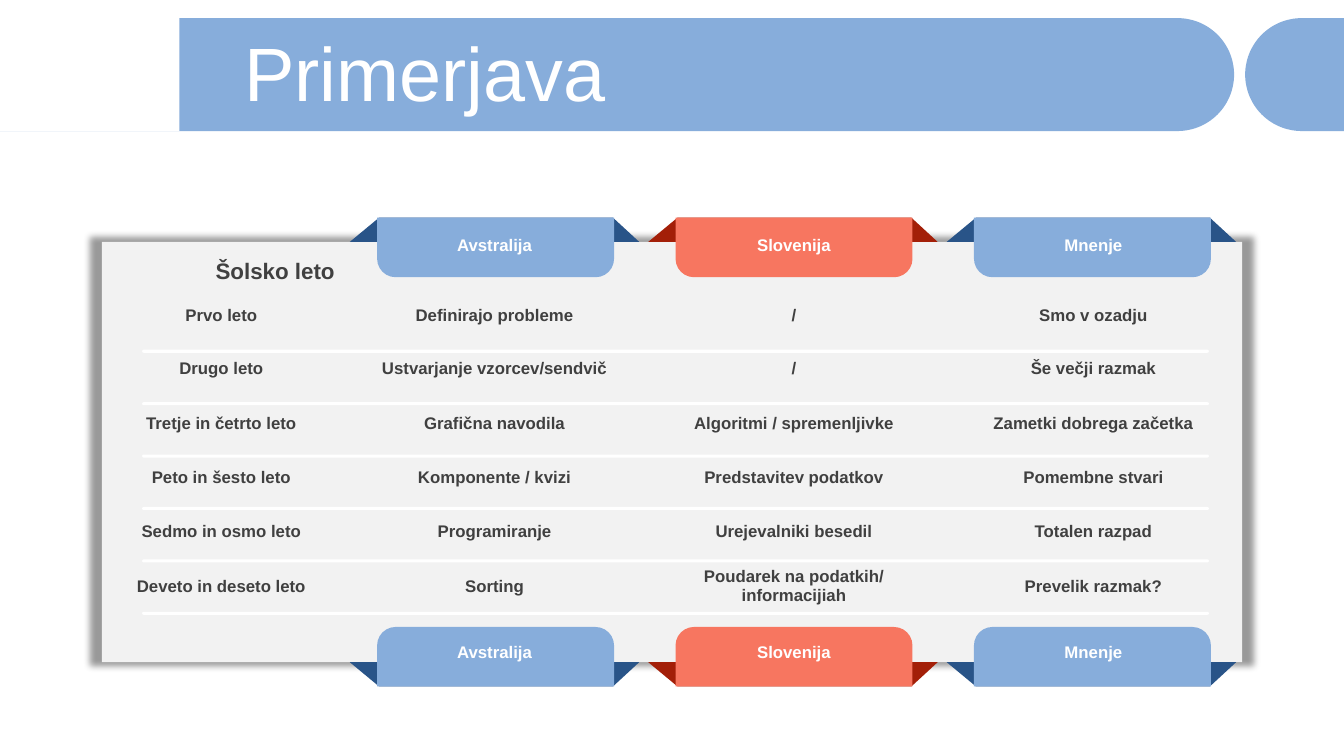
import math

from lxml import etree
from pptx import Presentation
from pptx.dml.color import RGBColor
from pptx.enum.shapes import MSO_SHAPE
from pptx.enum.text import MSO_ANCHOR, MSO_AUTO_SIZE, PP_ALIGN
from pptx.oxml.ns import qn
from pptx.util import Inches, Pt

TITLE = "Primerjava"
COUNTRIES = ["Avstralija", "Slovenija", "Mnenje"]
ROWS = [
    ["Šolsko leto"] + COUNTRIES,
    ["Prvo leto", "Definirajo probleme", "/", "Smo v ozadju"],
    ["Drugo leto", "Ustvarjanje vzorcev/sendvič", "/", "Še večji razmak"],
    ["Tretje in četrto leto", "Grafična navodila", "Algoritmi / spremenljivke",
     "Zametki dobrega začetka"],
    ["Peto in šesto leto", "Komponente / kvizi", "Predstavitev podatkov",
     "Pomembne stvari"],
    ["Sedmo in osmo leto", "Programiranje", "Urejevalniki besedil",
     "Totalen razpad"],
    ["Deveto in deseto leto", "Sorting", "Poudarek na podatkih/\ninformacijiah",
     "Prevelik razmak?"],
    [""] + COUNTRIES,
]
COLUMN_WIDTHS = [2.45, 2.97, 2.97, 2.97]
ROW_HEIGHTS = [0.86, 0.52, 0.54, 0.54, 0.54, 0.54, 0.54, 0.78]

FONT = "Arial"
WHITE = RGBColor(0xFF, 0xFF, 0xFF)
BLUE = RGBColor(0x87, 0xAD, 0xDB)
DARK_BLUE = RGBColor(0x29, 0x54, 0x88)
CORAL = RGBColor(0xF7, 0x76, 0x60)
DARK_RED = RGBColor(0xA3, 0x1F, 0x08)
PANEL_GRAY = RGBColor(0xF2, 0xF2, 0xF2)
TEXT_GRAY = RGBColor(0x40, 0x40, 0x40)
TAB_COLORS = [(BLUE, DARK_BLUE), (CORAL, DARK_RED), (BLUE, DARK_BLUE)]
NO_GRID_STYLE = "{2D5ABB26-0587-4C30-8999-92F81FD0307C}"

SLIDE_WIDTH = 13.33
BANNER_TOP, BANNER_BOTTOM, BANNER_RADIUS = 0.18, 1.3, 0.56
PANEL_TOP, PANEL_BOTTOM = 2.4, 6.57
TAB_TOP, TAB_BOTTOM = 2.16, 6.81
TAB_PITCH, TAB_WIDTH, TAB_HEIGHT = 2.96, 2.35, 0.59


def paint(shape, color):
    shape.fill.solid()
    shape.fill.fore_color.rgb = color
    shape.line.fill.background()
    shape.shadow.inherit = False


def add_outline(slide, points, color):
    """Draw a closed polygon from points given in inches."""
    points = [(Inches(x), Inches(y)) for x, y in points]
    builder = slide.shapes.build_freeform(*points[0])
    builder.add_line_segments(points[1:], close=True)
    paint(builder.convert_to_shape(), color)


def add_preset(slide, kind, left, top, width, height, color):
    shape = slide.shapes.add_shape(
        kind, Inches(left), Inches(top), Inches(width), Inches(height))
    paint(shape, color)
    return shape


def half_circle(center_x, direction):
    """Points from the banner's top to its bottom, bulging left or right."""
    center_y = (BANNER_TOP + BANNER_BOTTOM) / 2
    angles = [math.radians(degrees) for degrees in range(-90, 91, 3)]
    return [(center_x + direction * BANNER_RADIUS * math.cos(angle),
             center_y + BANNER_RADIUS * math.sin(angle)) for angle in angles]


def add_text(paragraph, text, size, color, bold):
    for index, line in enumerate(text.split("\n")):
        if index:
            paragraph.add_line_break()
        run = paragraph.add_run()
        run.text = line
        run.font.name = FONT
        run.font.size = Pt(size)
        run.font.bold = bold
        run.font.color.rgb = color


def add_banner(slide):
    for edge_x, center_x, direction in [(0, 11.68, 1), (SLIDE_WIDTH, 12.91, -1)]:
        outline = [(edge_x, BANNER_TOP), *half_circle(center_x, direction),
                   (edge_x, BANNER_BOTTOM)]
        add_outline(slide, outline, BLUE)
    add_preset(slide, MSO_SHAPE.RECTANGLE, 0, BANNER_TOP, 1.78,
               BANNER_BOTTOM - BANNER_TOP, WHITE)


def add_title(slide):
    title = slide.shapes.title
    title.left, title.top = Inches(2.32), Inches(0.37)
    title.width, title.height = Inches(10.69), Inches(0.79)
    title.element.getparent().append(title.element)  # in front of the banner
    frame = title.text_frame
    frame.auto_size = MSO_AUTO_SIZE.NONE
    frame.vertical_anchor = MSO_ANCHOR.MIDDLE
    paragraph = frame.paragraphs[0]
    paragraph.alignment = PP_ALIGN.LEFT
    paragraph.line_spacing = 0.9
    add_text(paragraph, TITLE, 54, WHITE, False)


def add_panel(slide):
    panel = add_preset(slide, MSO_SHAPE.RECTANGLE, 1.01, PANEL_TOP, 11.31,
                       PANEL_BOTTOM - PANEL_TOP, PANEL_GRAY)
    effects = panel.element.spPr.find(qn("a:effectLst"))
    shadow = etree.SubElement(effects, qn("a:outerShdw"), blurRad=str(Pt(5)),
                              sx="102000", sy="102000", algn="ctr", rotWithShape="0")
    color = etree.SubElement(shadow, qn("a:srgbClr"), val="000000")
    etree.SubElement(color, qn("a:alpha"), val="40000")
    for index in range(6):
        rule = add_preset(slide, MSO_SHAPE.ROUNDED_RECTANGLE,
                          1.41, 3.47 + 0.52 * index, 10.58, 0.03, WHITE)
        rule.adjustments[0] = 0.5


def add_tabs(slide):
    edges = [(PANEL_TOP, TAB_TOP, TAB_TOP, 180),
             (PANEL_BOTTOM, TAB_BOTTOM, TAB_BOTTOM - TAB_HEIGHT, 0)]
    for fold_y, outer_y, tab_top, rotation in edges:
        for index, (color, fold_color) in enumerate(TAB_COLORS):
            left = 3.74 + TAB_PITCH * index
            right = left + TAB_WIDTH
            fold = [(left - 0.27, fold_y), (left + 0.02, outer_y),
                    (right - 0.01, outer_y), (right + 0.25, fold_y)]
            add_outline(slide, fold, fold_color)
            tab = add_preset(slide, MSO_SHAPE.ROUND_2_SAME_RECTANGLE, left,
                             tab_top, TAB_WIDTH, TAB_HEIGHT, color)
            tab.adjustments[0] = 0.31
            tab.rotation = rotation


def add_comparison_table(slide):
    frame = slide.shapes.add_table(
        len(ROWS), len(COLUMN_WIDTHS), Inches(0.97), Inches(2.01),
        Inches(sum(COLUMN_WIDTHS)), Inches(sum(ROW_HEIGHTS)))
    table = frame.table
    table.first_row = table.horz_banding = False
    next(frame.element.iter(qn("a:tableStyleId"))).text = NO_GRID_STYLE
    for column, width in zip(table.columns, COLUMN_WIDTHS):
        column.width = Inches(width)
    for row, height in zip(table.rows, ROW_HEIGHTS):
        row.height = Inches(height)
    for row_index, texts in enumerate(ROWS):
        on_tab = row_index in (0, len(ROWS) - 1)
        for column_index, text in enumerate(texts):
            cell = table.cell(row_index, column_index)
            cell.fill.background()
            if not text:
                continue
            corner = row_index == column_index == 0
            cell.vertical_anchor = MSO_ANCHOR.BOTTOM if corner else MSO_ANCHOR.MIDDLE
            paragraph = cell.text_frame.paragraphs[0]
            paragraph.alignment = PP_ALIGN.RIGHT if corner else PP_ALIGN.CENTER
            color = WHITE if on_tab and not corner else TEXT_GRAY
            add_text(paragraph, text, 16 if corner else 12, color, True)


def main():
    presentation = Presentation()
    presentation.slide_width = Inches(SLIDE_WIDTH)
    presentation.slide_height = Inches(7.5)
    slide = presentation.slides.add_slide(presentation.slide_layouts[5])
    add_banner(slide)
    add_title(slide)
    add_panel(slide)
    add_tabs(slide)
    add_comparison_table(slide)
    presentation.save("out.pptx")


if __name__ == "__main__":
    main()
